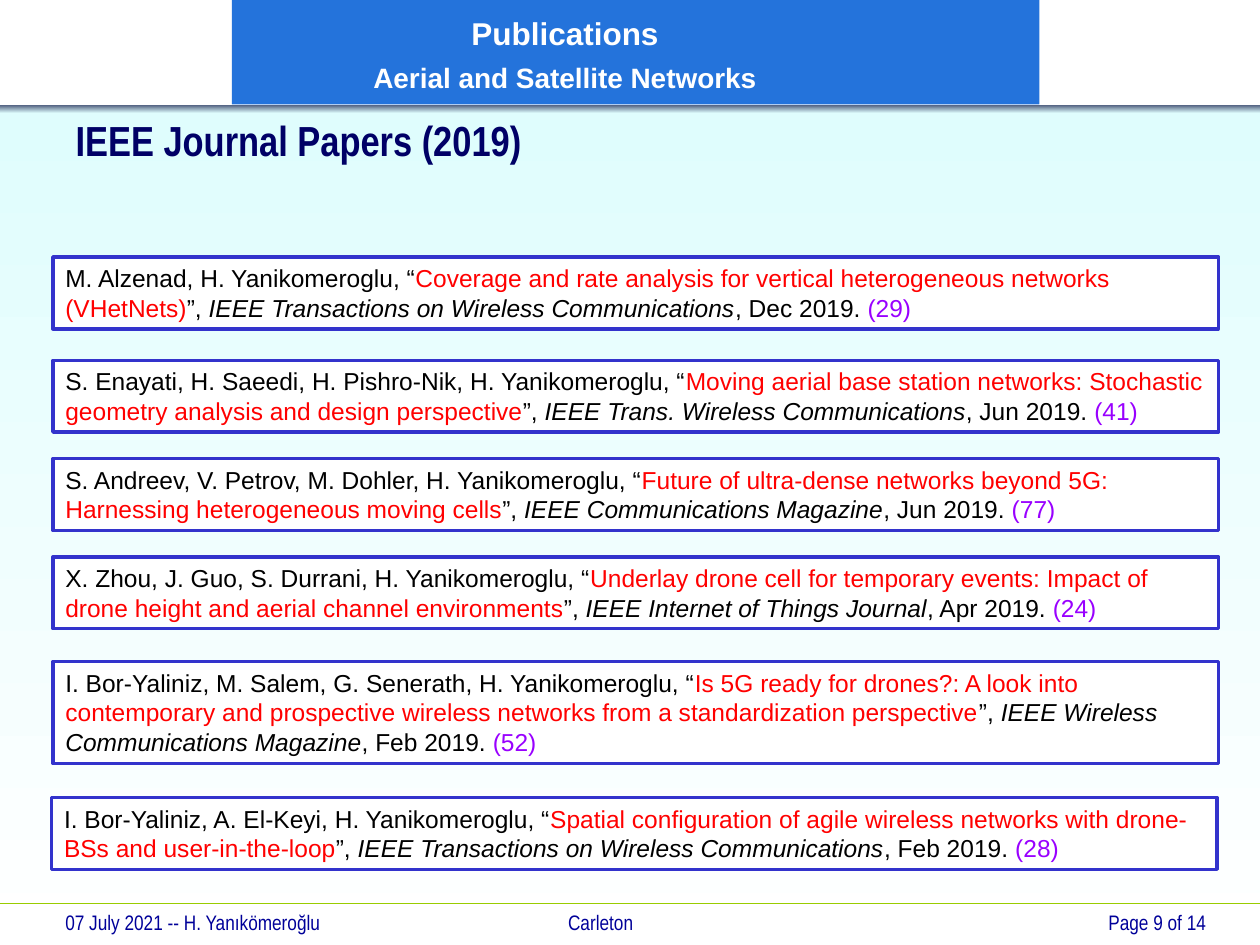
from dataclasses import dataclass

from lxml.etree import SubElement
from pptx import Presentation
from pptx.dml.color import RGBColor
from pptx.enum.shapes import MSO_CONNECTOR, MSO_SHAPE
from pptx.enum.text import MSO_ANCHOR, PP_ALIGN
from pptx.oxml.ns import qn
from pptx.util import Inches, Pt


@dataclass(frozen=True)
class Theme:
    body_font: str = "Arial"
    narrow_font: str = "Arial Narrow"
    white: str = "FFFFFF"
    sky: str = "DFFDFD"
    shade: str = "475577"
    banner: str = "2473DB"
    title: str = "000066"
    footer: str = "000099"
    footer_rule: str = "99CC00"
    border: str = "3333CC"
    text: str = "000000"
    paper: str = "FF0000"
    citations: str = "9900FF"
    title_size: int = 24
    banner_size: int = 18
    subtitle_size: int = 16
    paper_size: int = 14
    footer_size: int = 12


THEME = Theme()

PAPERS = [
    (0.42, 2.04, 0.57, "M. Alzenad, H. Yanikomeroglu",
     "Coverage and rate analysis for vertical heterogeneous networks (VHetNets)",
     "IEEE Transactions on Wireless Communications", "Dec 2019", 29),
    (0.42, 2.86, 0.57, "S. Enayati, H. Saeedi, H. Pishro-Nik, H. Yanikomeroglu",
     "Moving aerial base station networks: Stochastic geometry analysis and design perspective",
     "IEEE Trans. Wireless Communications", "Jun 2019", 41),
    (0.42, 3.64, 0.57, "S. Andreev, V. Petrov, M. Dohler, H. Yanikomeroglu",
     "Future of ultra-dense networks beyond 5G: Harnessing heterogeneous moving cells",
     "IEEE Communications Magazine", "Jun 2019", 77),
    (0.42, 4.42, 0.57, "X. Zhou, J. Guo, S. Durrani, H. Yanikomeroglu",
     "Underlay drone cell for temporary events: Impact of drone height and aerial channel environments",
     "IEEE Internet of Things Journal", "Apr 2019", 24),
    (0.42, 5.25, 0.81, "I. Bor-Yaliniz, M. Salem, G. Senerath, H. Yanikomeroglu",
     "Is 5G ready for drones?: A look into contemporary and prospective wireless networks "
     "from a standardization perspective",
     "IEEE Wireless Communications Magazine", "Feb 2019", 52),
    (0.41, 6.33, 0.57, "I. Bor-Yaliniz, A. El-Keyi, H. Yanikomeroglu",
     "Spatial configuration of agile wireless networks with drone-BSs and user-in-the-loop",
     "IEEE Transactions on Wireless Communications", "Feb 2019", 28),
]


def color(value):
    return RGBColor.from_string(value)


def style_font(font, name, size, value, bold=False):
    font.name = name
    font.size = Pt(size)
    font.bold = bold
    font.color.rgb = color(value)


def add_rectangle(slide, box, fill=None, line=None):
    shape = slide.shapes.add_shape(MSO_SHAPE.RECTANGLE, *map(Inches, box))
    shape.shadow.inherit = False
    if fill:
        shape.fill.solid()
        shape.fill.fore_color.rgb = color(fill)
    if line:
        shape.line.color.rgb = color(line)
        shape.line.width = Pt(2)
    else:
        shape.line.fill.background()
    return shape


def add_gradient(slide, box, top, bottom):
    shape = add_rectangle(slide, box)
    shape.fill.gradient()
    shape.fill.gradient_angle = 270
    for stop, position, value in zip(shape.fill.gradient_stops, (0, 1), (top, bottom)):
        stop.position = position
        stop.color.rgb = color(value)


def add_banner(slide, box):
    shape = add_rectangle(slide, box, THEME.banner)
    frame = shape.text_frame
    frame.word_wrap = True
    frame.margin_right = Inches(1.22)
    frame.vertical_anchor = MSO_ANCHOR.MIDDLE
    lines = [("Publications", THEME.banner_size, 0),
             ("Aerial and Satellite Networks", THEME.subtitle_size, 3)]
    for index, (text, size, space) in enumerate(lines):
        paragraph = frame.add_paragraph() if index else frame.paragraphs[0]
        paragraph.text = text
        paragraph.alignment = PP_ALIGN.CENTER
        paragraph.line_spacing = 1.1
        paragraph.space_before = Pt(space)
        style_font(paragraph.font, THEME.body_font, size, THEME.white, True)


def add_title(slide, box):
    title = slide.shapes.title
    title.left, title.top, title.width, title.height = map(Inches, box)
    title.text_frame.vertical_anchor = MSO_ANCHOR.MIDDLE
    paragraph = title.text_frame.paragraphs[0]
    paragraph.text = "IEEE Journal Papers (2019)"
    paragraph.alignment = PP_ALIGN.LEFT
    style_font(paragraph.font, THEME.narrow_font, THEME.title_size, THEME.title, True)


def add_paper(slide, box, authors, name, journal, date, citations):
    shape = add_rectangle(slide, box, THEME.white, THEME.border)
    frame = shape.text_frame
    frame.word_wrap = True
    frame.vertical_anchor = MSO_ANCHOR.TOP
    paragraph = frame.paragraphs[0]
    paragraph.alignment = PP_ALIGN.LEFT
    style_font(paragraph.font, THEME.body_font, THEME.paper_size, THEME.text)
    parts = [(f"{authors}, “", THEME.text, False),
             (name, THEME.paper, False),
             ("”, ", THEME.text, False),
             (journal, THEME.text, True),
             (f", {date}. ", THEME.text, False),
             (f"({citations})", THEME.citations, False)]
    for text, value, italic in parts:
        run = paragraph.add_run()
        run.text = text
        run.font.color.rgb = color(value)
        run.font.italic = italic


def add_footer_text(slide, box, text, alignment, tab=None):
    frame = slide.shapes.add_textbox(*map(Inches, box)).text_frame
    frame.word_wrap = True
    paragraph = frame.paragraphs[0]
    paragraph.text = text
    paragraph.alignment = alignment
    if tab:
        tabs = SubElement(paragraph._p.get_or_add_pPr(), qn("a:tabLst"))
        SubElement(tabs, qn("a:tab"), pos=str(Inches(tab)), algn="l")
    style_font(paragraph.font, THEME.narrow_font, THEME.footer_size, THEME.footer)


def add_footer(slide, box):
    left, top, width, height = box
    rule = slide.shapes.add_connector(
        MSO_CONNECTOR.STRAIGHT, *map(Inches, (left, top, left + width, top)))
    rule.line.color.rgb = color(THEME.footer_rule)
    rule.line.width = Pt(0.75)
    SubElement(rule._element.spPr, qn("a:effectLst"))
    add_footer_text(slide, (left + 0.42, top, 6.25, height),
                    "07 July 2021 -- H. Yanıkömeroğlu\tCarleton", PP_ALIGN.LEFT, 3.99)
    add_footer_text(slide, (left + 7.5, top, 2.17, height), "Page 9 of 14", PP_ALIGN.RIGHT)


def main():
    presentation = Presentation()
    presentation.slide_width = Inches(10)
    presentation.slide_height = Inches(7.5)
    slide = presentation.slides.add_slide(presentation.slide_layouts[5])
    add_gradient(slide, (0, 0.86, 10, 6.64), THEME.sky, THEME.white)
    add_footer(slide, (0, 7.17, 10, 0.33))
    add_gradient(slide, (0, 0.83, 10, 0.07), THEME.shade, THEME.sky)
    add_banner(slide, (1.84, 0, 6.41, 0.83))
    title = slide.shapes.title
    slide.shapes._spTree.append(title._element)
    add_title(slide, (0.5, 0.9, 6.92, 0.42))
    for left, top, height, *details in PAPERS:
        add_paper(slide, (left, top, 9.25, height), *details)
    presentation.save("out.pptx")


if __name__ == "__main__":
    main()
